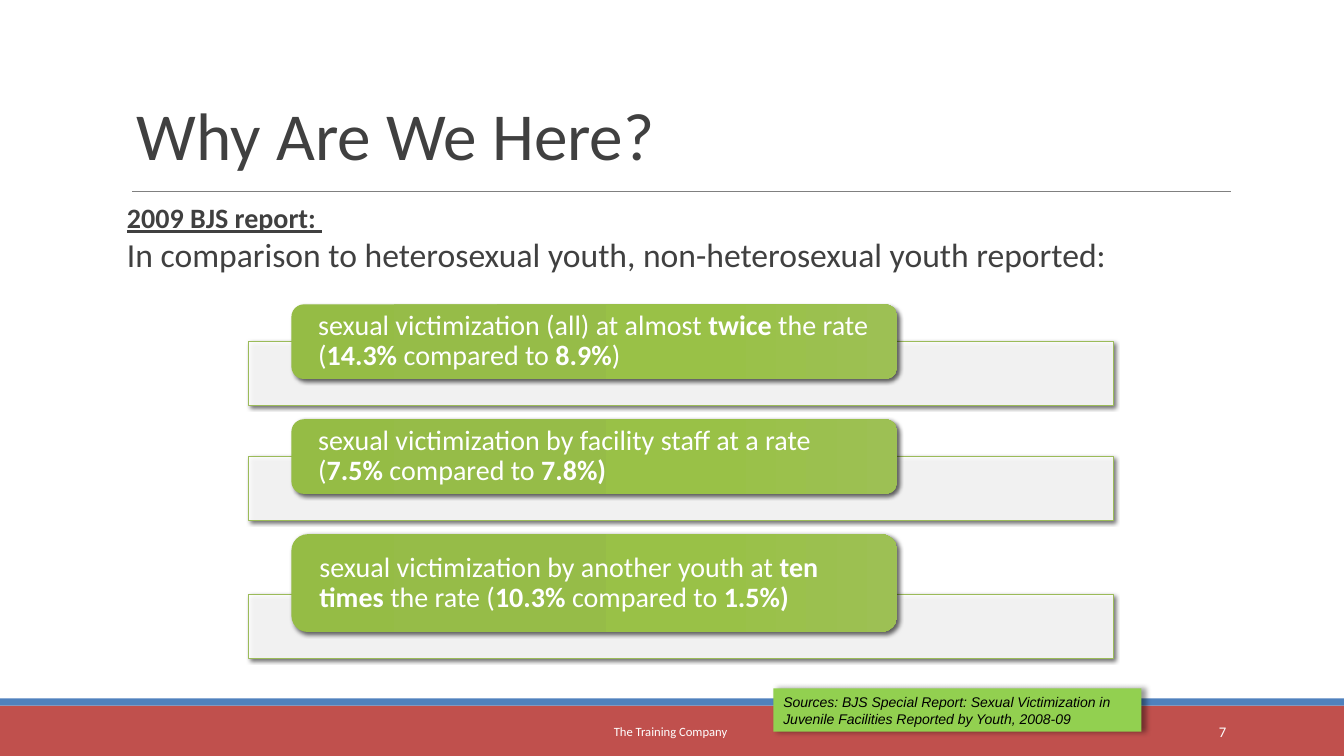
from lxml import etree
from pptx import Presentation
from pptx import util as u
from pptx.dml.color import RGBColor
from pptx.enum import shapes, text
from pptx.oxml import ns

PX = 9144  # 100 px to the inch
WHITE = RGBColor(0xFF, 0xFF, 0xFF)
BLACK = RGBColor(0, 0, 0)
INK = RGBColor(0x40, 0x40, 0x40)
GRAY = RGBColor(0x80, 0x80, 0x80)
RED = RGBColor(0xC0, 0x50, 0x4D)
BLUE = RGBColor(0x4F, 0x81, 0xBD)
LIME = RGBColor(0x92, 0xD0, 0x50)
GREEN = RGBColor(0x9B, 0xBB, 0x59)
LABEL_STOPS = [(0, "95BC45"), (34, "96BC48"), (70, "99C147"), (100, "9DC054")]
BAR_SHADOW = (60, 3, 2, 45)  # opacity, blur, distance, angle
NOTE_SHADOW = (40, 4, 3, 0)

LABELS = [
    (74, [("sexual victimization (all) at almost ", ""), ("twice", "b"),
          (" the rate (", ""), ("14.3% ", "b"), ("compared to ", ""),
          ("8.9%", "b"), (")", "")]),
    (74, [("sexual victimization by facility staff at a rate (", ""),
          ("7.5% ", "b"), ("compared to ", ""), ("7.8%)", "b")]),
    (97, [("sexual victimization by another youth at ", ""),
          ("ten times ", "b"), ("the rate (", ""), ("10.3% ", "b"),
          ("compared to ", ""), ("1.5%)", "b")]),
]


def add_xml(parent, tag, **attributes):
    return etree.SubElement(parent, ns.qn(tag), attributes)


def add_shadow(shape, opacity, blur, distance, angle):
    effects = shape._element.spPr.find(ns.qn("a:effectLst"))
    outer = add_xml(effects, "a:outerShdw", blurRad=str(blur * 12700),
                    dist=str(distance * 12700), dir=str(angle * 60000),
                    algn="ctr", rotWithShape="0")
    color = add_xml(outer, "a:srgbClr", val="000000")
    add_xml(color, "a:alpha", val=str(opacity * 1000))


def add_block(page, box, color=None, kind=shapes.MSO_SHAPE.RECTANGLE):
    """Add a borderless shape, filled if a color is given."""
    block = page.shapes.add_shape(kind, *(side * PX for side in box))
    block.line.fill.background()
    block.shadow.inherit = False
    if color is not None:
        block.fill.solid()
        block.fill.fore_color.rgb = color
    return block


def set_frame(shape, anchor, across=10, down=5):
    frame = shape.text_frame
    frame.word_wrap = True
    frame.vertical_anchor = anchor
    frame.margin_left = frame.margin_right = across * PX
    frame.margin_top = frame.margin_bottom = down * PX
    return frame


def write(para, spans, size, color, font="Calibri",
          align=text.PP_ALIGN.LEFT, spacing=None):
    """Add (words, style) spans; style letters are b, i and u."""
    para.alignment = align
    if spacing:
        para.line_spacing = spacing
    for words, style in spans:
        span = para.add_run()
        span.text = words
        span.font.name = font
        span.font.size = u.Pt(size)
        span.font.color.rgb = color
        span.font.bold = "b" in style
        span.font.italic = "i" in style
        span.font.underline = "u" in style


def add_text(page, box, words, size, color, anchor, **options):
    field = page.shapes.add_textbox(*(side * PX for side in box))
    write(set_frame(field, anchor).paragraphs[0], [(words, "")], size, color, **options)


def add_footer_band(page, left, top, width, height):
    add_block(page, (left, top + 7, width, height - 7), RED)
    add_block(page, (left, top, width, 7), BLUE)


def add_title(page, left, top, width, height):
    rule_y = (top + height + 12) * PX
    rule = page.shapes.add_connector(shapes.MSO_CONNECTOR.STRAIGHT,
                                     (left + 5) * PX, rule_y, (left + 1095) * PX, rule_y)
    rule.line.color.rgb = GRAY
    rule.line.width = u.Pt(0.5)
    add_xml(rule._element.spPr, "a:effectLst")
    add_text(page, (left, top, width, height), "Why Are We Here?", 48, INK,
             text.MSO_ANCHOR.BOTTOM, spacing=0.85)


def add_intro(page, *box):
    frame = set_frame(add_block(page, box, WHITE), text.MSO_ANCHOR.TOP, across=0)
    write(frame.paragraphs[0], [("2009 BJS report: ", "bu")], 20, INK)
    write(frame.add_paragraph(),
          [("In comparison to heterosexual youth, non-heterosexual youth reported:", "")],
          24, INK)


def add_source_note(page, *box):
    note = add_block(page, box, LIME)
    add_shadow(note, *NOTE_SHADOW)
    write(set_frame(note, text.MSO_ANCHOR.TOP).paragraphs[0],
          [("Sources: BJS Special Report: Sexual Victimization in Juvenile "
            "Facilities Reported by Youth, 2008-09", "i")], 10, BLACK, "Arial")


def add_bar(page, *box):
    bar = add_block(page, box, WHITE)
    color = bar._element.spPr.find(ns.qn("a:solidFill"))[0]
    add_xml(color, "a:alpha", val="90000")
    bar.line.color.rgb = GREEN
    bar.line.width = u.Pt(0.75)
    add_shadow(bar, *BAR_SHADOW)


def add_label(page, spans, *box):
    label = add_block(page, box, kind=shapes.MSO_SHAPE.ROUNDED_RECTANGLE)
    label.adjustments[0] = 0.167
    label.fill.gradient()
    label.fill.gradient_angle = 0
    stops = label._element.spPr.find(ns.qn("a:gradFill")).find(ns.qn("a:gsLst"))
    for stop in list(stops):
        stops.remove(stop)
    for position, value in LABEL_STOPS:
        stop = add_xml(stops, "a:gs", pos=str(position * 1000))
        add_xml(stop, "a:srgbClr", val=value)
    add_shadow(label, *BAR_SHADOW)
    frame = set_frame(label, text.MSO_ANCHOR.MIDDLE, across=23, down=4)
    write(frame.paragraphs[0], spans, 20, WHITE, spacing=0.9)


def add_findings(page, left, top, width):
    """Stack the bars, each with a label overlapping its upper part."""
    bar_height, overlap, gap = 63, 37, 14
    for height, spans in LABELS:
        bar_top = top + height - overlap
        add_bar(page, left, bar_top, width, bar_height)
        add_label(page, spans, left + 43, top, 601, height)
        top = bar_top + bar_height + gap


def add_footer_text(page, top, height):
    middle = text.MSO_ANCHOR.MIDDLE
    add_text(page, (403, top, 527, height), "The Training Company ", 9, WHITE,
             middle, align=text.PP_ALIGN.CENTER)
    add_text(page, (1083, top, 143, height), "7", 10.5, WHITE,
             middle, align=text.PP_ALIGN.RIGHT)


def main():
    deck = Presentation()
    deck.slide_width, deck.slide_height = 1333 * PX, 750 * PX
    page = deck.slides.add_slide(deck.slide_layouts[6])
    add_footer_band(page, 0, 693, 1333, 57)
    add_title(page, 126, 53, 768, 125)
    add_intro(page, 126, 194, 1016, 384)
    add_source_note(page, 767, 683, 365, 43)
    add_findings(page, 246, 302, 858)
    add_footer_text(page, 706, 40)
    deck.save("out.pptx")


if __name__ == "__main__":
    main()
